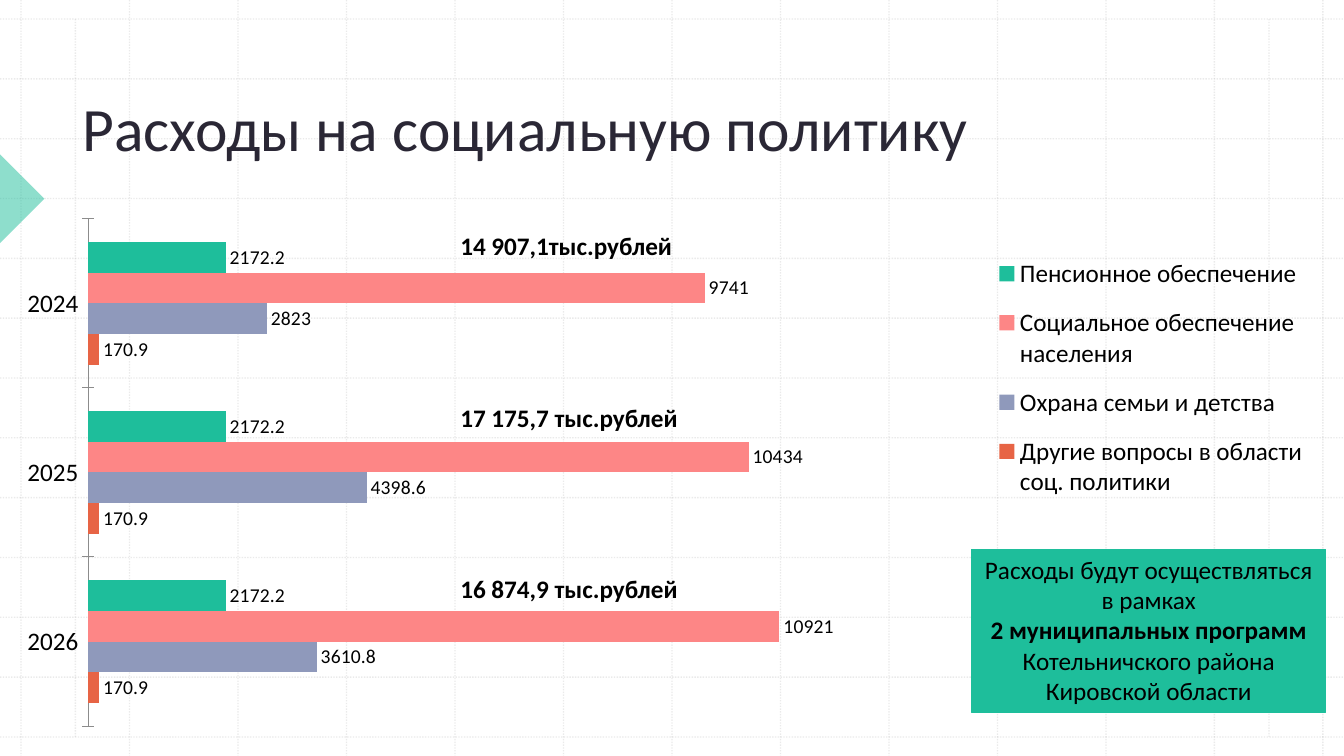
"""Builds the slide on social policy spending."""
from lxml import etree
from pptx import Presentation
from pptx import util as u
from pptx.chart import data as chart_data
from pptx.dml import color
from pptx.enum import chart as ch, dml, shapes, text
from pptx.oxml import ns

FONT = "Calibri"
COLORS = {"grid": "BCBCBC", "title": "2A2735", "text": "000000", "axis": "8C8C8C",
          "pension": "1EBE9B", "welfare": "FD8686", "family": "8F99BB", "other": "E76445"}
YEARS = ["2026", "2025", "2024"]
SPENDING = [
    ("Другие вопросы в области соц. политики", "other", (170.9, 170.9, 170.9)),
    ("Охрана семьи и детства", "family", (3610.8, 4398.6, 2823)),
    ("Социальное обеспечение населения", "welfare", (10921, 10434, 9741)),
    ("Пенсионное обеспечение", "pension", (2172.2, 2172.2, 2172.2)),
]
TOTALS = ["14 907,1тыс.рублей", "17 175,7 тыс.рублей", "16 874,9 тыс.рублей"]


def rgb(name):
    """Return a palette colour."""
    return color.RGBColor.from_string(COLORS[name])


def lengths(box):
    """Turn centimetres into lengths."""
    return [u.Cm(value) for value in box]


def set_font(font, size, name="text", bold=False):
    """Format a font."""
    font.name, font.size, font.bold = FONT, u.Pt(size), bold
    font.color.rgb = rgb(name)


def add_span(para, words, size, name="text", bold=False):
    """Add one formatted run."""
    span = para.add_run()
    span.text = words
    set_font(span.font, size, name, bold)


def set_alpha(fill, percent):
    """Make a solid fill see-through."""
    tint = fill._xPr.find(ns.qn("a:solidFill"))[0]
    etree.SubElement(tint, ns.qn("a:alpha"), val=str(percent * 1000))


def add_grid_line(page, start, end):
    """Draw one dotted line."""
    line = page.shapes.add_connector(shapes.MSO_CONNECTOR.STRAIGHT, *lengths(start + end))
    line.line.width = u.Pt(1)
    line.line.color.rgb = rgb("grid")
    line.line.dash_style = dml.MSO_LINE.ROUND_DOT
    set_alpha(line.line.fill, 30)
    etree.SubElement(line._element.spPr, ns.qn("a:effectLst"))


def add_backdrop(page, box):
    """Draw the dotted grid and the marker at the left edge."""
    left, top, width, height = box
    right, bottom = left + width, top + height
    edge_x, edge_y, steps = 0.53, 0.48, 12
    for step in range(steps + 1):
        x = left + edge_x + step * (width - 2 * edge_x) / steps
        y = top + edge_y + step * (height - 2 * edge_y) / steps
        add_grid_line(page, (x, top), (x, bottom))
        add_grid_line(page, (left, y), (right, y))
    for x in (left + 1.9, right - 1.89):
        add_grid_line(page, (x, top + edge_y), (x, bottom - edge_y))
    marker = page.shapes.add_shape(shapes.MSO_SHAPE.RIGHT_TRIANGLE,
                                   *lengths((left - 0.79, top + 4.22, 1.58, 1.58)))
    marker.rotation = 225
    marker.shadow.inherit = False
    marker.fill.solid()
    marker.fill.fore_color.rgb = rgb("pension")
    set_alpha(marker.fill, 50)
    marker.line.fill.background()


def add_title(page, box):
    """Place and fill the title above the grid."""
    title = page.shapes.title
    title._element.getparent().append(title._element)
    title.left, title.top, title.width, title.height = lengths(box)
    frame = title.text_frame
    frame.vertical_anchor = text.MSO_ANCHOR.BOTTOM
    frame.auto_size = text.MSO_AUTO_SIZE.NONE
    para = frame.paragraphs[0]
    para.alignment = text.PP_ALIGN.LEFT
    add_span(para, "Расходы на социальную политику", 44, "title")


def set_layout(parent, before, inner, **parts):
    """Give a chart part a manual position."""
    for old in parent.findall(ns.qn("c:layout")):
        parent.remove(old)
    layout = etree.Element(ns.qn("c:layout"))
    manual = etree.SubElement(layout, ns.qn("c:manualLayout"))
    if inner:
        etree.SubElement(manual, ns.qn("c:layoutTarget"), val="inner")
    for mode in ("xMode", "yMode"):
        etree.SubElement(manual, ns.qn("c:" + mode), val="edge")
    for key, value in parts.items():
        etree.SubElement(manual, ns.qn("c:" + key), val=str(value))
    parent.find(ns.qn(before)).addprevious(layout)


def add_spending_chart(page, box):
    """Add the bar chart of spending by year."""
    data = chart_data.CategoryChartData()
    data.categories = YEARS
    for name, _, values in SPENDING:
        data.add_series(name, values)
    chart = page.shapes.add_chart(ch.XL_CHART_TYPE.BAR_CLUSTERED, *lengths(box), data).chart
    set_font(chart.font, 18)
    chart.has_title = False
    chart.has_legend = True
    chart.legend.position = ch.XL_LEGEND_POSITION.RIGHT
    chart.legend.include_in_layout = False
    set_font(chart.legend.font, 18)
    set_layout(chart.legend._element, "c:overlay", False, x=0.74, y=0.06, w=0.25, h=0.47)

    years = chart.category_axis
    years.major_tick_mark = ch.XL_TICK_MARK.CROSS
    years.format.line.color.rgb = rgb("axis")
    set_font(years.tick_labels.font, 18)
    scale = chart.value_axis
    scale.visible = False
    scale.has_major_gridlines = False
    scale.minimum_scale, scale.maximum_scale = 0, 12000

    plot = chart.plots[0]
    plot.gap_width, plot.overlap, plot.vary_by_categories = 150, 0, False
    set_layout(plot._element.getparent(), "c:barChart", True,
               x=0.0445, y=0.024, w=0.5865, h=0.865)
    for series, (_, name, _) in zip(plot.series, SPENDING):
        series.format.fill.solid()
        series.format.fill.fore_color.rgb = rgb(name)
        labels = series.data_labels
        labels.show_value = True
        labels.position = ch.XL_LABEL_POSITION.OUTSIDE_END
        set_font(labels.font, 14)


def add_totals(page, box, pitch):
    """Write the total of each year at an equal pitch."""
    left, top, width, height = box
    for row, total in enumerate(TOTALS):
        label = page.shapes.add_textbox(*lengths((left, top + row * pitch, width, height)))
        label.text_frame.word_wrap = True
        add_span(label.text_frame.paragraphs[0], total, 18, bold=True)


def add_note(page, box):
    """Add the filled note about the programmes."""
    note = page.shapes.add_shape(shapes.MSO_SHAPE.RECTANGLE, *lengths(box))
    note.shadow.inherit = False
    note.fill.solid()
    note.fill.fore_color.rgb = rgb("pension")
    note.line.color.rgb = rgb("pension")
    note.line.width = u.Pt(1)
    frame = note.text_frame
    frame.word_wrap = True
    frame.vertical_anchor = text.MSO_ANCHOR.TOP
    para = frame.paragraphs[0]
    para.alignment = text.PP_ALIGN.CENTER
    add_span(para, "Расходы будут осуществляться в рамках", 18)
    para.add_line_break()
    add_span(para, "2 муниципальных программ ", 18, bold=True)
    add_span(para, "Котельничского района Кировской области", 18)


def main():
    """Build and save the deck."""
    deck = Presentation()
    deck.slide_width, deck.slide_height = u.Cm(33.87), u.Cm(19.05)
    page = deck.slides.add_slide(deck.slide_layouts[5])
    add_backdrop(page, (0, 0, 33.87, 19.05))
    add_title(page, (1.83, 0.25, 28.68, 4.01))
    add_spending_chart(page, (0.69, 5.16, 32.72, 14.78))
    add_totals(page, (11.35, 5.69, 6.99, 1.02), 4.32)
    add_note(page, (24.49, 13.84, 8.92, 4.11))
    deck.save("out.pptx")


if __name__ == "__main__":
    main()
